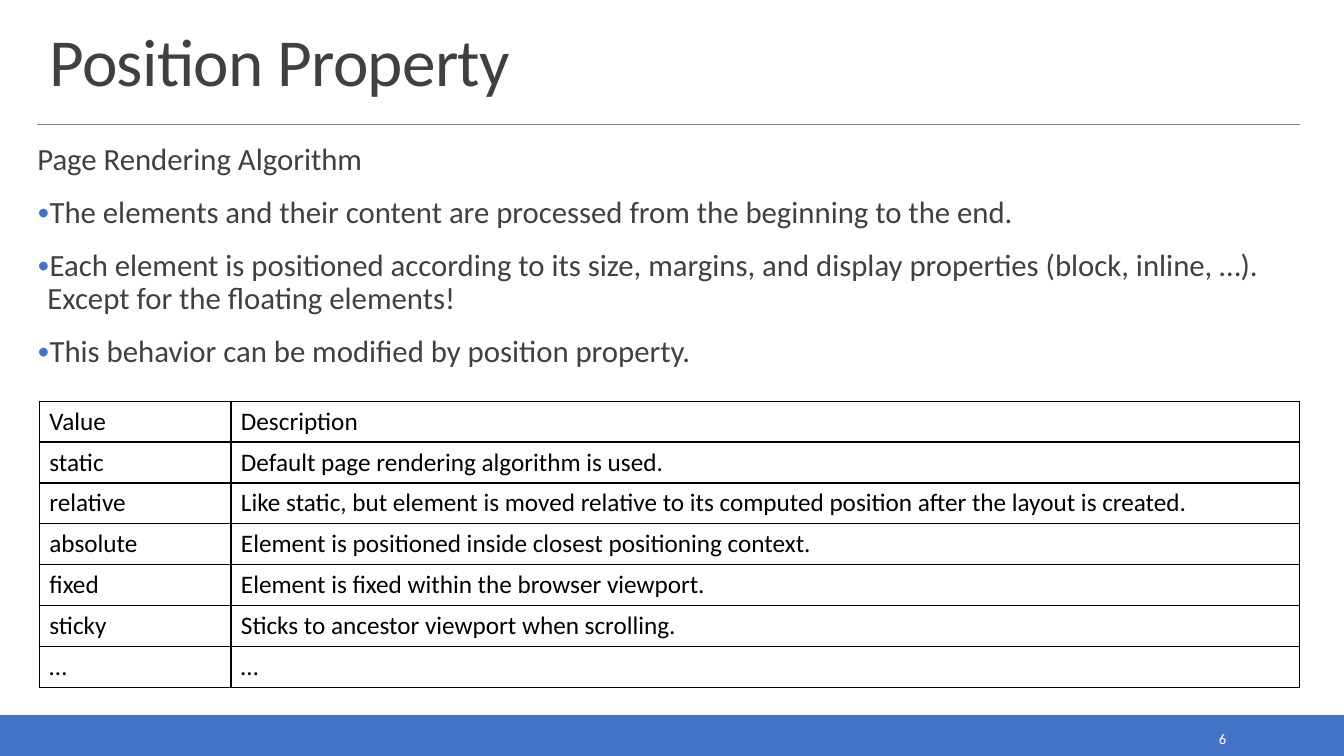
from dataclasses import dataclass

from lxml import etree
from pptx import Presentation
from pptx.dml.color import RGBColor
from pptx.enum.shapes import MSO_CONNECTOR, MSO_SHAPE
from pptx.enum.text import MSO_ANCHOR, MSO_AUTO_SIZE, PP_ALIGN
from pptx.oxml.ns import qn
from pptx.util import Pt

RECTANGLE = MSO_SHAPE.RECTANGLE
STRAIGHT = MSO_CONNECTOR.STRAIGHT
BOTTOM, MIDDLE, TOP = MSO_ANCHOR.BOTTOM, MSO_ANCHOR.MIDDLE, MSO_ANCHOR.TOP
LEFT, RIGHT = PP_ALIGN.LEFT, PP_ALIGN.RIGHT
NO_AUTOFIT = MSO_AUTO_SIZE.NONE

EMU_PER_PX = 9144
FONT = "Calibri"
BLUE = RGBColor(0x44, 0x72, 0xC4)
GRAY = RGBColor(0x80, 0x80, 0x80)
DARK = RGBColor(0x40, 0x40, 0x40)
BLACK = RGBColor(0, 0, 0)
WHITE = RGBColor(0xFF, 0xFF, 0xFF)


@dataclass(frozen=True)
class Box:
    left: int
    top: int
    width: int
    height: int

    def emu(self) -> tuple[int, int, int, int]:
        return px(self.left), px(self.top), px(self.width), px(self.height)


@dataclass(frozen=True)
class BodyLine:
    text: str
    bulleted: bool = True


@dataclass(frozen=True)
class PositionValue:
    value: str
    description: str


BODY_LINES = [
    BodyLine("Page Rendering Algorithm", bulleted=False),
    BodyLine("The elements and their content are processed from the beginning to the end."),
    BodyLine("Each element is positioned according to its size, margins, and display "
             "properties (block, inline, …).\vExcept for the floating elements!"),
    BodyLine("This behavior can be modified by position property."),
]
POSITION_VALUES = [
    PositionValue("Value", "Description"),
    PositionValue("static", "Default page rendering algorithm is used."),
    PositionValue("relative", "Like static, but element is moved relative to its computed "
                  "position after the layout is created."),
    PositionValue("absolute", "Element is positioned inside closest positioning context."),
    PositionValue("fixed", "Element is fixed within the browser viewport."),
    PositionValue("sticky", "Sticks to ancestor viewport when scrolling."),
    PositionValue("…", "…"),
]


def px(length: int) -> int:
    return length * EMU_PER_PX


def place(shape, box: Box) -> None:
    shape.left, shape.top, shape.width, shape.height = box.emu()


def format_runs(paragraph, size: float, color: RGBColor) -> None:
    for run in paragraph.runs:
        run.font.name = FONT
        run.font.size = Pt(size)
        run.font.color.rgb = color


def set_bullet(paragraph, bulleted: bool) -> None:
    properties = paragraph._p.get_or_add_pPr()
    indent = px(10) if bulleted else 0
    properties.set("marL", str(indent))
    properties.set("indent", str(-indent))
    if not bulleted:
        etree.SubElement(properties, qn("a:buNone"))
        return
    bullet_color = etree.SubElement(properties, qn("a:buClr"))
    etree.SubElement(bullet_color, qn("a:srgbClr"), val=str(BLUE))
    etree.SubElement(properties, qn("a:buSzPct"), val="80000")
    etree.SubElement(properties, qn("a:buFont"), typeface=FONT)
    etree.SubElement(properties, qn("a:buChar"), char="•")


def set_borders(cell) -> None:
    properties = cell._tc.get_or_add_tcPr()
    for side in ("lnL", "lnR", "lnT", "lnB"):
        border = etree.SubElement(properties, qn(f"a:{side}"), w=str(Pt(1)))
        fill = etree.SubElement(border, qn("a:solidFill"))
        etree.SubElement(fill, qn("a:srgbClr"), val=str(BLACK))


def draw_frame(slide) -> None:
    footer_band = slide.shapes.add_shape(RECTANGLE, *Box(0, 710, 1333, 40).emu())
    footer_band.shadow.inherit = False
    footer_band.fill.solid()
    footer_band.fill.fore_color.rgb = BLUE
    footer_band.line.color.rgb = BLUE
    footer_band.line.width = Pt(1.25)

    title_rule = slide.shapes.add_connector(STRAIGHT, px(37), px(123), px(1289), px(123))
    title_rule.line.color.rgb = GRAY
    title_rule.line.width = Pt(0.5)
    etree.SubElement(title_rule._element.spPr, qn("a:effectLst"))

    page_number = slide.shapes.add_textbox(*Box(1083, 719, 143, 28).emu())
    frame = page_number.text_frame
    frame.word_wrap = True
    frame.vertical_anchor = MIDDLE
    frame.text = "6"
    frame.paragraphs[0].alignment = RIGHT
    format_runs(frame.paragraphs[0], 10.5, WHITE)


def write_title(title) -> None:
    place(title, Box(39, 20, 1252, 84))
    frame = title.text_frame
    frame.auto_size = NO_AUTOFIT
    frame.vertical_anchor = BOTTOM
    frame.text = "Position Property"
    heading = frame.paragraphs[0]
    heading.alignment = LEFT
    heading.line_spacing = 0.85
    format_runs(heading, 48, DARK)
    heading.runs[0].font._element.set("spc", "-50")


def write_body(body) -> None:
    place(body, Box(37, 139, 1252, 252))
    frame = body.text_frame
    frame.auto_size = NO_AUTOFIT
    frame.vertical_anchor = TOP
    frame.margin_left = frame.margin_right = 0
    frame.margin_top = frame.margin_bottom = px(4)
    frame.text = "\n".join(line.text for line in BODY_LINES)
    for paragraph, line in zip(frame.paragraphs, BODY_LINES):
        paragraph.alignment = LEFT
        paragraph.line_spacing = 0.9
        paragraph.space_before = Pt(12)
        paragraph.space_after = Pt(2)
        set_bullet(paragraph, line.bulleted)
        format_runs(paragraph, 22, DARK)


def draw_values_table(slide) -> None:
    box = Box(39, 398, 1250, 284)
    table = slide.shapes.add_table(len(POSITION_VALUES), 2, *box.emu()).table
    table.first_row = table.horz_banding = False
    for column, width in zip(table.columns, (190, 1060)):
        column.width = px(width)
    for row, entry in zip(table.rows, POSITION_VALUES):
        for cell, text in zip(row.cells, (entry.value, entry.description)):
            cell.text_frame.text = text
            format_runs(cell.text_frame.paragraphs[0], 18, BLACK)
            set_borders(cell)
            cell.fill.background()


def main() -> None:
    presentation = Presentation()
    presentation.slide_width = px(1333)
    presentation.slide_height = px(750)
    slide = presentation.slides.add_slide(presentation.slide_layouts[1])
    draw_frame(slide)
    write_title(slide.shapes.title)
    write_body(slide.placeholders[1])
    draw_values_table(slide)
    presentation.save("out.pptx")


if __name__ == "__main__":
    main()
